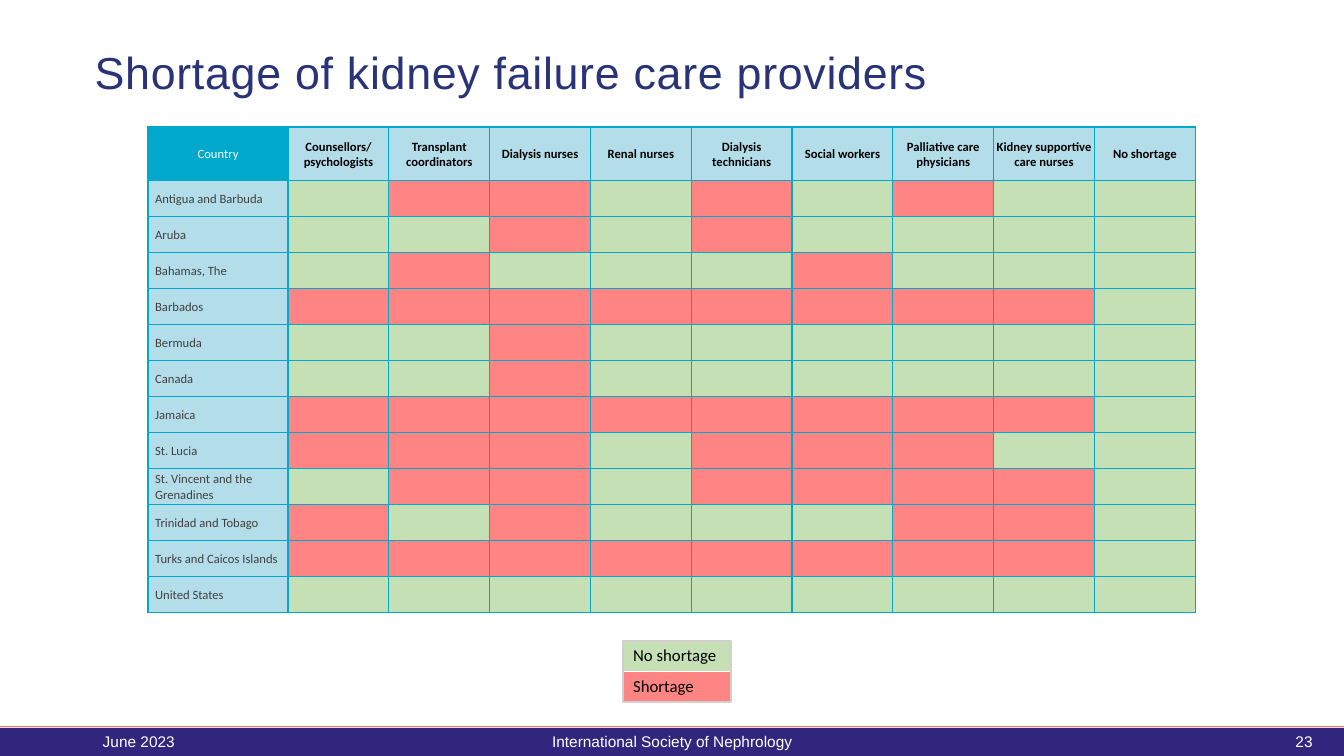
from dataclasses import dataclass

from lxml.etree import SubElement
from pptx import Presentation
from pptx.dml.color import RGBColor
from pptx.enum.shapes import MSO_CONNECTOR, MSO_SHAPE
from pptx.enum.text import MSO_ANCHOR, MSO_AUTO_SIZE, PP_ALIGN
from pptx.oxml.ns import qn
from pptx.util import Cm, Pt

TITLE = "Shortage of kidney failure care providers"
PROVIDERS = [
    "Counsellors/ psychologists", "Transplant coordinators", "Dialysis nurses",
    "Renal nurses", "Dialysis technicians", "Social workers",
    "Palliative care physicians", "Kidney supportive care nurses", "No shortage",
]
SHORTAGES = {
    "Antigua and Barbuda": "-XX-X-X--",
    "Aruba": "--X-X----",
    "Bahamas, The": "-X---X---",
    "Barbados": "XXXXXXXX-",
    "Bermuda": "--X------",
    "Canada": "--X------",
    "Jamaica": "XXXXXXXX-",
    "St. Lucia": "XXX-XXX--",
    "St. Vincent and the Grenadines": "-XX-XXXX-",
    "Trinidad and Tobago": "X-X---XX-",
    "Turks and Caicos Islands": "XXXXXXXX-",
    "United States": "---------",
}
LEGEND = [("No shortage", "-"), ("Shortage", "X")]
FOOTER = [
    ("June 2023", 2.34, 7.62, PP_ALIGN.LEFT),
    ("International Society of Nephrology", 11.23, 11.43, PP_ALIGN.CENTER),
    ("23", 23.93, 9.4, PP_ALIGN.RIGHT),
]


@dataclass(frozen=True)
class Theme:
    title: str = "283378"
    footer: str = "32257E"
    rule: str = "FE7055"
    grid: str = "00A8CB"
    label: str = "B4DDEA"
    no_shortage: str = "C5E0B4"
    shortage: str = "FF8585"
    frame: str = "D0CECE"
    white: str = "FFFFFF"
    black: str = "000000"
    country: str = "404040"
    head_font: str = "Arial"
    table_font: str = "Calibri"
    title_size: float = 32
    legend_size: float = 12
    footer_size: float = 11
    table_size: float = 9


T = Theme()
STATUS = {"-": T.no_shortage, "X": T.shortage}
CELL = {"margin_left": 0, "margin_right": 0, "margin_top": 0, "margin_bottom": 0,
        "vertical_anchor": MSO_ANCHOR.MIDDLE}
LABEL = CELL | {"margin_left": Cm(0.18), "margin_right": Cm(0.18)}
HEAD = CELL | {"margin_left": Cm(0.03), "margin_right": Cm(0.03), "margin_top": Cm(0.03)}


def apply(obj, values):
    for name, value in values.items():
        setattr(obj, name, value)


def write(tf, text, color, align=PP_ALIGN.LEFT, spacing=1.0, **font):
    p = tf.paragraphs[0]
    apply(p, {"alignment": align, "line_spacing": spacing})
    r = p.add_run()
    r.text = text
    apply(r.font, font)
    r.font.color.rgb = RGBColor.from_string(color)
    return r


def paint(cell, color, border):
    tcPr = cell._tc.get_or_add_tcPr()
    for side in ("lnL", "lnR", "lnT", "lnB"):
        ln = SubElement(tcPr, qn(f"a:{side}"), w=str(Pt(1)))
        fill = SubElement(ln, qn("a:solidFill"))
        SubElement(fill, qn("a:srgbClr"), val=border)
    cell.fill.solid()
    cell.fill.fore_color.rgb = RGBColor.from_string(color)


def add_grid(s, left, top, widths, heights):
    frame = s.shapes.add_table(len(heights), len(widths), Cm(left), Cm(top),
                               Cm(sum(widths)), Cm(sum(heights)))
    table = frame.table
    apply(table, {"first_row": False, "horz_banding": False})
    for col, width in zip(table.columns, widths):
        col.width = Cm(width)
    for row, height in zip(table.rows, heights):
        row.height = Cm(height)
    return table


def add_box(s, left, top, width, height, fill=None, line=None):
    sp = s.shapes.add_shape(MSO_SHAPE.RECTANGLE, Cm(left), Cm(top), Cm(width), Cm(height))
    sp.shadow.inherit = False
    for part, color in ((sp.fill, fill), (sp.line.fill, line)):
        if color:
            part.solid()
            part.fore_color.rgb = RGBColor.from_string(color)
        else:
            part.background()
    if line:
        sp.line.width = Pt(1)


def add_footer(s, width):
    add_box(s, 0, 18.34, width, 0.71, fill=T.footer)
    rule = s.shapes.add_connector(MSO_CONNECTOR.STRAIGHT, 0, Cm(18.31), Cm(width), Cm(18.31))
    rule.line.color.rgb = RGBColor.from_string(T.rule)
    rule.line.width = Pt(0.75)
    SubElement(rule._element.spPr, qn("a:effectLst"))
    for text, left, box_width, align in FOOTER:
        tf = s.shapes.add_textbox(Cm(left), Cm(18.16), Cm(box_width), Cm(1.02)).text_frame
        apply(tf, {"word_wrap": True, "vertical_anchor": MSO_ANCHOR.MIDDLE})
        write(tf, text, T.white, align, name=T.head_font, size=Pt(T.footer_size))


def add_title(s):
    sp = s.shapes.title
    apply(sp, {"left": Cm(2.13), "top": Cm(0.99), "width": Cm(23.52), "height": Cm(1.8)})
    tf = sp.text_frame
    apply(tf, {"auto_size": MSO_AUTO_SIZE.NONE, "vertical_anchor": MSO_ANCHOR.MIDDLE})
    r = write(tf, TITLE, T.title, spacing=0.9, name=T.head_font, size=Pt(T.title_size))
    r._r.get_or_add_rPr().set("spc", "50")


def add_shortages(s):
    head_height, table_height = 1.35, 12.24
    row_height = (table_height - head_height) / len(SHORTAGES)
    table = add_grid(s, 3.73, 3.2, [3.53] + [2.54] * len(PROVIDERS),
                     [head_height] + [row_height] * len(SHORTAGES))
    font = {"name": T.table_font, "size": Pt(T.table_size)}

    def label(row, col, text, fill, color, layout, **style):
        cell = table.cell(row, col)
        apply(cell, layout)
        paint(cell, fill, T.grid)
        write(cell.text_frame, text, color, **style, **font)

    label(0, 0, "Country", T.grid, T.white, LABEL, align=PP_ALIGN.CENTER, spacing=1.07)
    for col, provider in enumerate(PROVIDERS, 1):
        label(0, col, provider, T.label, T.black, HEAD, align=PP_ALIGN.CENTER, bold=True)
    for row, (country, marks) in enumerate(SHORTAGES.items(), 1):
        label(row, 0, country, T.label, T.country, LABEL, spacing=1.07)
        for col, mark in enumerate(marks, 1):
            cell = table.cell(row, col)
            apply(cell, CELL)
            paint(cell, STATUS[mark], T.grid)


def add_legend(s):
    left, top, width, row_height = 15.7, 16.15, 2.72, 0.77
    table = add_grid(s, left, top, [width], [row_height] * len(LEGEND))
    for row, (text, mark) in enumerate(LEGEND):
        cell = table.cell(row, 0)
        paint(cell, STATUS[mark], T.white)
        write(cell.text_frame, text, T.black, name=T.table_font, size=Pt(T.legend_size))
    add_box(s, left, top, width, row_height * len(LEGEND), line=T.frame)


def main():
    width = 33.87
    prs = Presentation()
    apply(prs, {"slide_width": Cm(width), "slide_height": Cm(19.05)})
    s = prs.slides.add_slide(prs.slide_layouts[5])
    add_footer(s, width)
    add_title(s)
    add_shortages(s)
    add_legend(s)
    prs.save("out.pptx")


if __name__ == "__main__":
    main()
